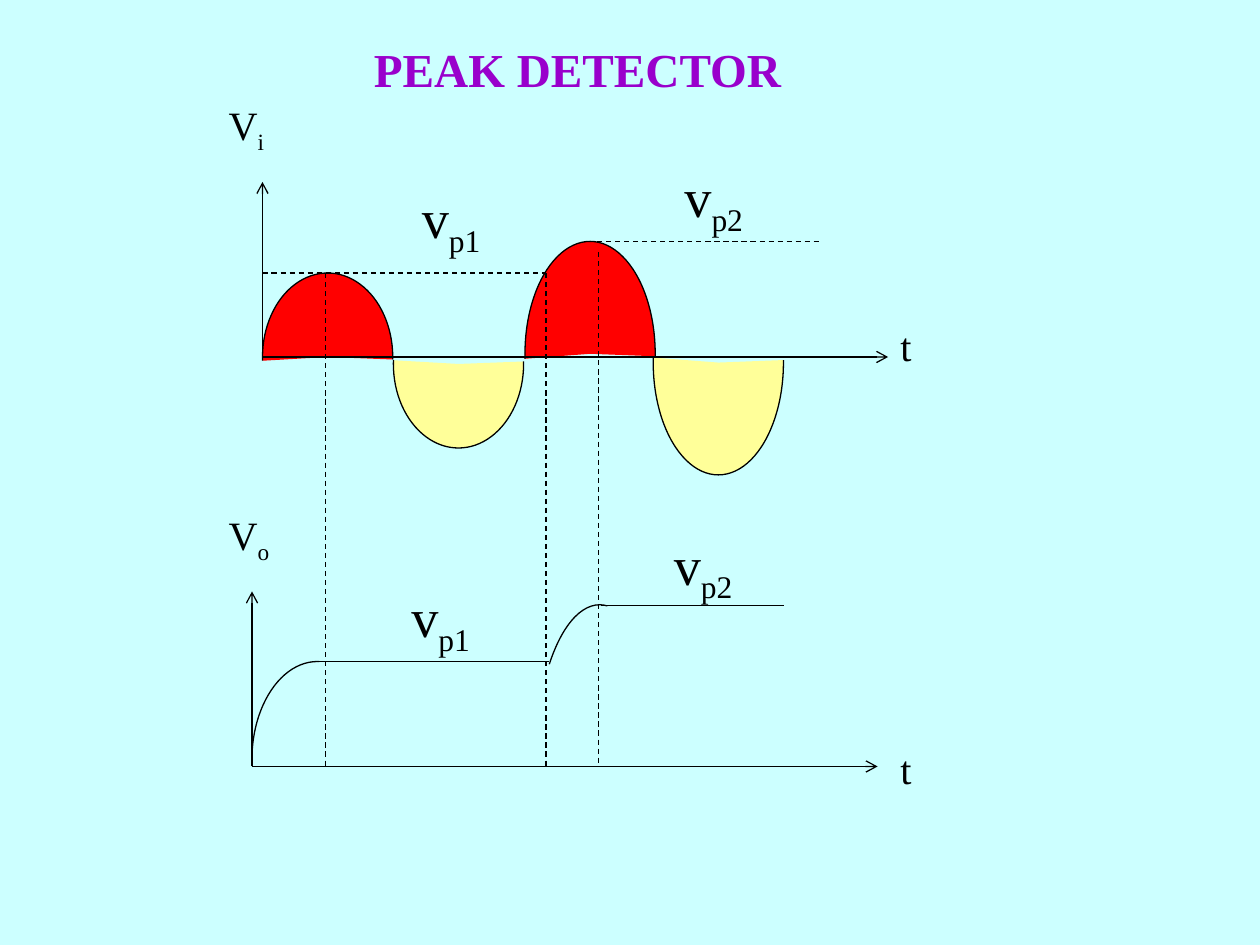
import lxml.etree
import pptx
import pptx.util
import pptx.dml.color
import pptx.enum.dml
import pptx.enum.shapes
import pptx.enum.text
import pptx.oxml.ns

Pt = pptx.util.Pt
RGBColor = pptx.dml.color.RGBColor
qualified_name = pptx.oxml.ns.qn
THEME = {
    "font": "Times New Roman",
    "background": RGBColor(0xCC, 0xFF, 0xFF),
    "title": RGBColor(0x99, 0x00, 0xCC),
    "ink": RGBColor(0, 0, 0),
    "positive": RGBColor(0xFF, 0, 0),
    "negative": RGBColor(0xFF, 0xFF, 0x99),
    "title_size": 27,
    "axis_size": 23,
    "peak_size": 31,
    "space_size": 14,
    "line_width": 0.75,
}


def write_text(paragraph, text, size, color, bold=False, baseline=None):
    run = paragraph.add_run()
    run.text = text
    font_format = {"name": THEME["font"], "size": Pt(size), "bold": bold}
    for name, value in font_format.items():
        setattr(run.font, name, value)
    run.font.color.rgb = color
    if baseline:
        run._r.get_or_add_rPr().set("baseline", str(baseline))


def add_line(slide, start, end, dashed=False, arrow=False):
    connector = slide.shapes.add_connector(
        pptx.enum.shapes.MSO_CONNECTOR.STRAIGHT, *map(Pt, start + end)
    )
    connector.line.color.rgb = THEME["ink"]
    connector.line.width = Pt(THEME["line_width"])
    if dashed:
        connector.line.dash_style = pptx.enum.dml.MSO_LINE.DASH
    properties = connector._element.spPr
    if arrow:
        outline = properties.find(qualified_name("a:ln"))
        lxml.etree.SubElement(outline, qualified_name("a:tailEnd"), type="arrow")
    lxml.etree.SubElement(properties, qualified_name("a:effectLst"))


presentation = pptx.Presentation()
presentation.slide_width = Pt(720)
presentation.slide_height = Pt(540)
slide = presentation.slides.add_slide(presentation.slide_layouts[5])
slide.background.fill.solid()
slide.background.fill.fore_color.rgb = THEME["background"]

title = slide.shapes.title
title_position = {"left": 180, "top": 18, "width": 300, "height": 42}
for name, value in title_position.items():
    setattr(title, name, Pt(value))
title_format = {
    "vertical_anchor": pptx.enum.text.MSO_ANCHOR.MIDDLE,
    "auto_size": pptx.enum.text.MSO_AUTO_SIZE.NONE,
    "word_wrap": True,
}
for name, value in title_format.items():
    setattr(title.text_frame, name, value)
title_paragraph = title.text_frame.paragraphs[0]
title_paragraph.alignment = pptx.enum.text.PP_ALIGN.CENTER
write_text(title_paragraph, "PEAK DETECTOR", THEME["title_size"], THEME["title"], bold=True)

curves = [
    (262, 208, 37.2, 48, 357.8, 183.3, "negative"),
    (187.2, 204, 37.2, 48, 176.7, 2.2, "positive"),
    (337.2, 202.2, 37.2, 64.2, 175.6, 2.2, "positive"),
    (410.5, 207.2, 37.2, 64.2, 357.8, 184.4, "negative"),
    (181.5, 434.2, 37.5, 56.2, 175.6, 271, None),
    (342.7, 434.9, 36.7, 89.3, 242.5, 272.8, None),
]
for center_x, center_y, radius_x, radius_y, start_angle, end_angle, fill in curves:
    curve = slide.shapes.add_shape(
        pptx.enum.shapes.MSO_SHAPE.ARC,
        Pt(center_x - radius_x), Pt(center_y - radius_y), Pt(2 * radius_x), Pt(2 * radius_y),
    )
    curve.shadow.inherit = False
    for index, angle in enumerate((start_angle, end_angle)):
        curve.adjustments[index] = angle * 0.6
    if fill:
        curve.fill.solid()
        curve.fill.fore_color.rgb = THEME[fill]
    else:
        curve.fill.background()
    curve.line.color.rgb = THEME["ink"]
    curve.line.width = Pt(THEME["line_width"])

for left, bottom in ((150, 204), (144, 438)):
    add_line(slide, (left, bottom), (left, bottom - 100), arrow=True)
    add_line(slide, (left, bottom), (left + 357.5, bottom), arrow=True)

for x, top in ((186, 156), (312, 156), (342, 144)):
    add_line(slide, (x, top), (x, 438), dashed=True)
for left, right, y in ((150, 312, 156), (336, 468, 138)):
    add_line(slide, (left, y), (right, y), dashed=True)
for left, right, y in ((180, 314, 378), (343.5, 448, 346)):
    add_line(slide, (left, y), (right, y))

labels = [
    (120, 54, 60, 50, " ", "V", "i", "axis_size"),
    (120, 288, 60, 50, " ", "V", "o", "axis_size"),
    (507.5, 180, 45, 50, "", "t", "", "axis_size"),
    (507.5, 422, 45, 50, "", "t", "", "axis_size"),
    (234, 102, 60, 45, "", "v", "p1", "peak_size"),
    (228, 330, 60, 45, "", "v", "p1", "peak_size"),
    (384, 90, 60, 45, "", "v", "p2", "peak_size"),
    (378, 300, 60, 45, "", "v", "p2", "peak_size"),
]
for left, top, width, height, lead, symbol, subscript, size in labels:
    label = slide.shapes.add_textbox(Pt(left), Pt(top), Pt(width), Pt(height))
    label.text_frame.word_wrap = True
    paragraph = label.text_frame.paragraphs[0]
    if lead:
        write_text(paragraph, lead, THEME["space_size"], THEME["ink"])
    write_text(paragraph, symbol, THEME[size], THEME["ink"])
    if subscript:
        write_text(paragraph, subscript, THEME[size], THEME["ink"], baseline=-25000)

presentation.save("out.pptx")
